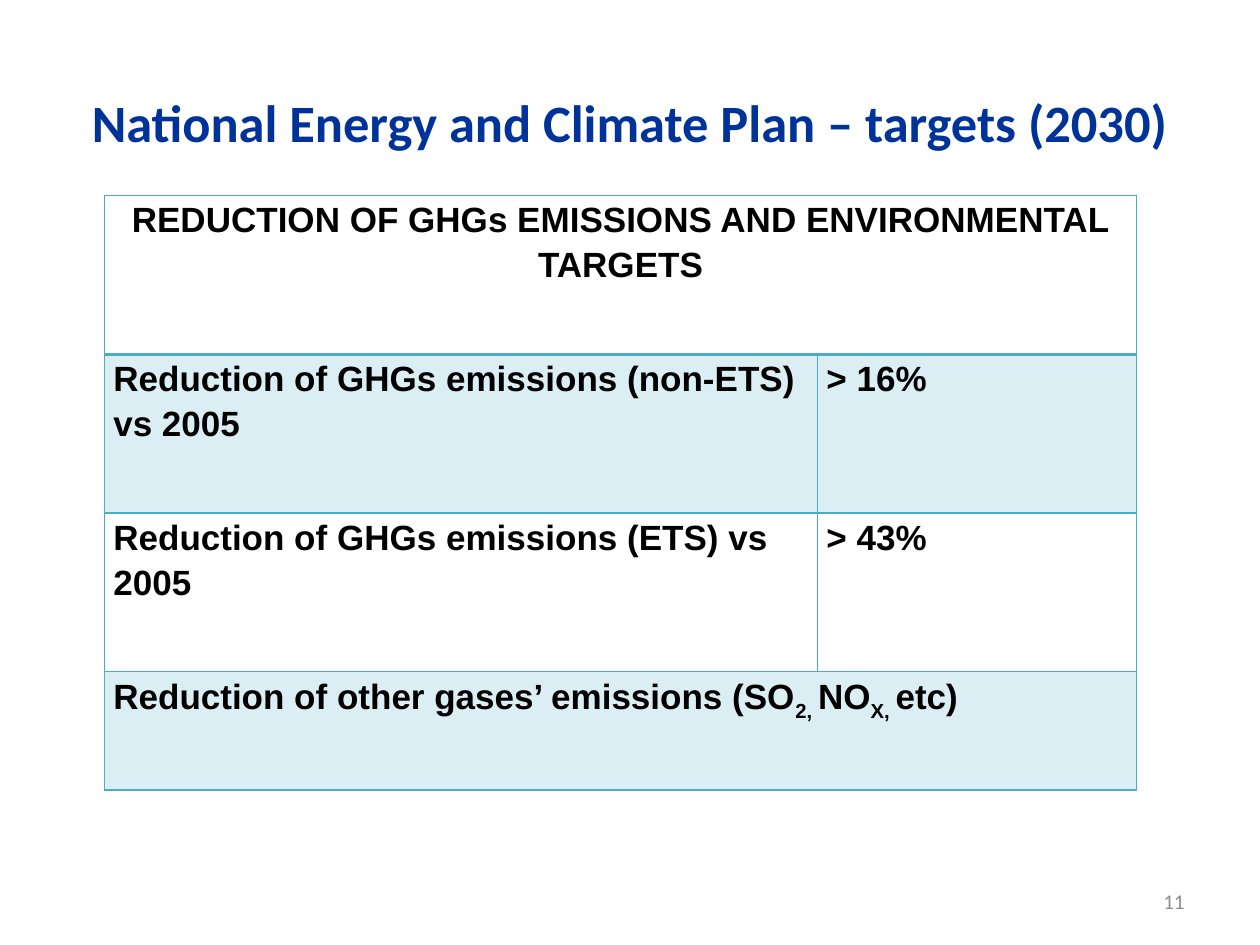
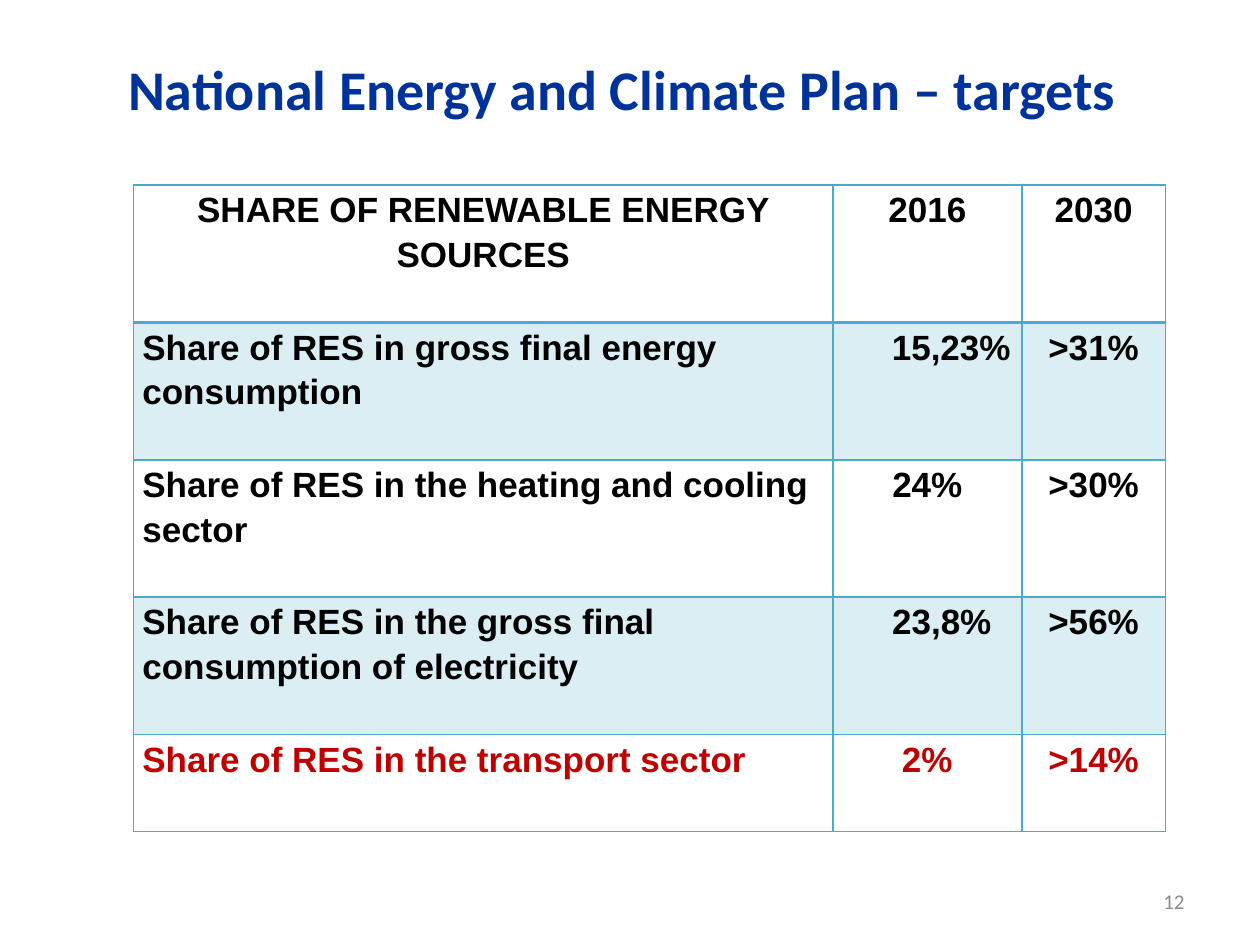
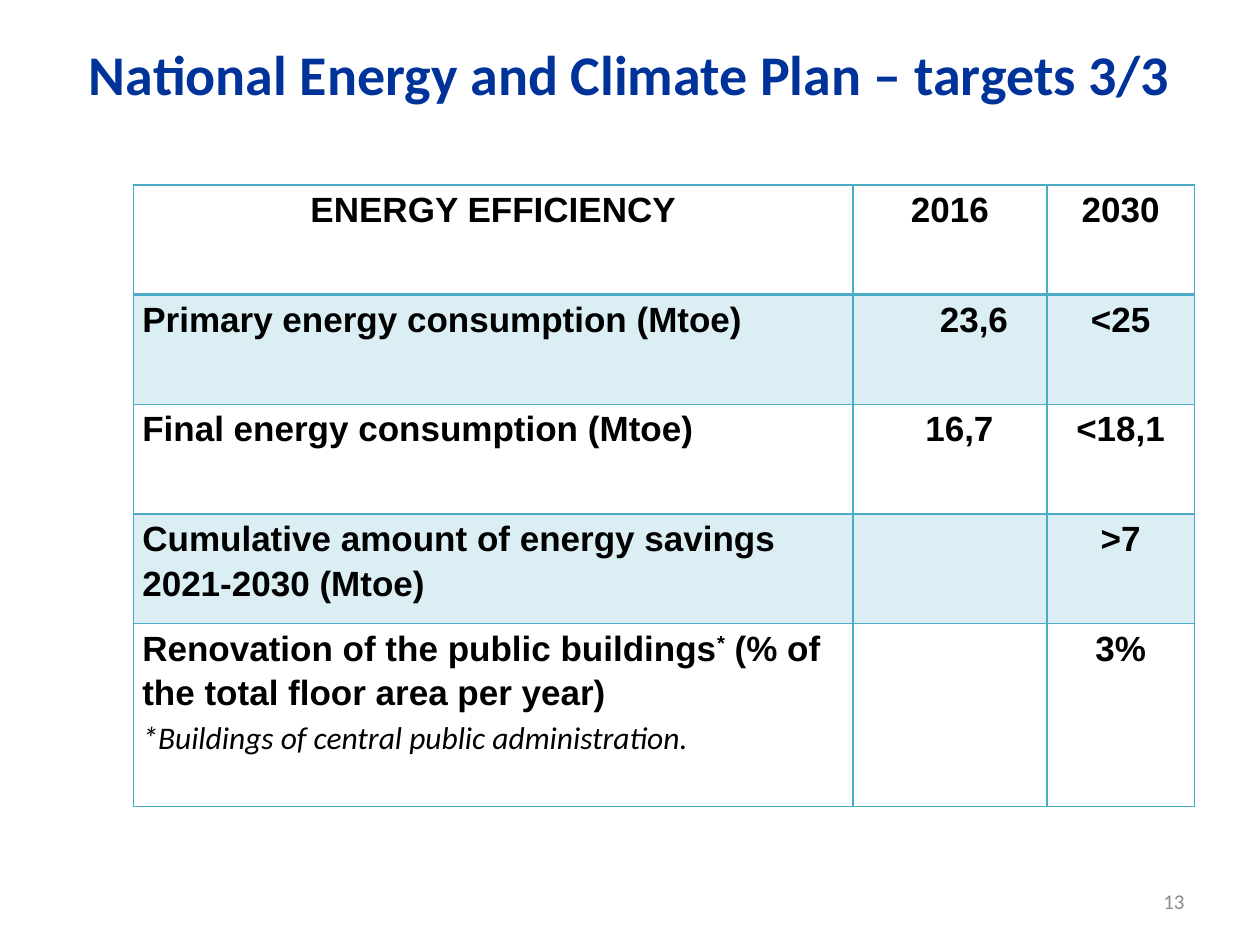
from dataclasses import dataclass

from lxml.etree import SubElement
from pptx import Presentation
from pptx.dml.color import RGBColor as RGB
from pptx.enum.text import MSO_ANCHOR as Anchor, PP_ALIGN as Align
from pptx.oxml.ns import qn
from pptx.util import Emu, Pt

PX = 9144  # EMU in one px, 100 px to the inch


def px(n):
    return Emu(n * PX)


@dataclass(frozen=True)
class Theme:
    navy: str = "003399"
    teal: str = "4BACC6"
    black: str = "000000"
    red: str = "C00000"
    grey: str = "8C8C8C"
    heading_font: str = "Calibri"
    table_font: str = "Arial"
    title_size: int = 32
    cell_size: int = 20
    note_size: int = 18
    number_size: int = 12
    tint: int = 20000  # alpha of the shaded rows
    rule: int = 1
    header_rule: int = 2


class Deck:
    def __init__(self, theme):
        self.theme = theme
        self.prs = Presentation()
        self.prs.slide_width, self.prs.slide_height = px(1000), px(750)
        self.s = None

    def add_slide(self, number):
        self.s = self.prs.slides.add_slide(self.prs.slide_layouts[6])
        t = self.theme
        self.text(str(number), (717, 695, 233, 40), Align.RIGHT,
                  dict(name=t.heading_font, size=t.number_size, color=t.grey))

    def run(self, p, text, fmt):
        r = p.add_run()
        r.text = text
        for key, value in fmt.items():
            if key == "color":
                r.font.color.rgb = RGB.from_string(value)
            elif key == "baseline":
                r._r.get_or_add_rPr().set(key, str(value * 1000))
            else:
                setattr(r.font, key, Pt(value) if key == "size" else value)

    def text(self, text, box, align, fmt, **margins):
        tf = self.s.shapes.add_textbox(*map(px, box)).text_frame
        tf.word_wrap = True
        tf.vertical_anchor = Anchor.MIDDLE
        for side, value in margins.items():
            setattr(tf, f"margin_{side}", px(value))
        p = tf.paragraphs[0]
        p.alignment = align
        self.run(p, text, fmt)

    def title(self, text, height=125, size=None, **margins):
        t = self.theme
        self.text(text, (50, 30, 900, height), Align.CENTER,
                  dict(name=t.heading_font, size=size or t.title_size,
                       color=t.navy, bold=True), **margins)

    def borders(self, cell, row):
        t = self.theme
        widths = dict(lnL=t.rule, lnR=t.rule,
                      lnT=t.header_rule if row == 1 else t.rule,
                      lnB=t.header_rule if row == 0 else t.rule)
        tcPr = cell._tc.get_or_add_tcPr()
        for tag, width in widths.items():
            ln = SubElement(tcPr, qn(f"a:{tag}"), w=str(Pt(width)))
            fill = SubElement(ln, qn("a:solidFill"))
            SubElement(fill, qn("a:srgbClr"), val=t.teal)

    def shade(self, cell, row):
        if row % 2 == 0:
            cell.fill.background()
            return
        cell.fill.solid()
        cell.fill.fore_color.rgb = RGB.from_string(self.theme.teal)
        color = cell._tc.tcPr.find(f"{qn('a:solidFill')}/{qn('a:srgbClr')}")
        SubElement(color, qn("a:alpha"), val=str(self.theme.tint))

    def fill_cell(self, cell, content, align, color, indent):
        """content: a string, or paragraphs that are lists of (text, format)."""
        t = self.theme
        margins = dict(left=7 + indent, top=0, right=7, bottom=0)
        for side, value in margins.items():
            setattr(cell, f"margin_{side}", px(value))
        base = dict(name=t.table_font, size=t.cell_size, color=color, bold=True)
        paragraphs = [[(content, {})]] if isinstance(content, str) else content
        tf = cell.text_frame
        for i, runs in enumerate(paragraphs):
            p = tf.add_paragraph() if i else tf.paragraphs[0]
            p.alignment, p.line_spacing = align, 1.15
            for text, fmt in runs:
                if text:
                    self.run(p, text, base | fmt)

    def table(self, left, top, widths, heights, rows, value_align=Align.CENTER,
              indents=None, red_row=None):
        """A row with a single entry spans the whole width."""
        t = self.theme
        table = self.s.shapes.add_table(
            len(rows), len(widths), px(left), px(top),
            px(sum(widths)), px(sum(heights))).table
        table.first_row = table.horz_banding = False
        for col, width in zip(table.columns, widths):
            col.width = px(width)
        for i, (row, height) in enumerate(zip(rows, heights)):
            table.rows[i].height = px(height)
            for j in range(len(widths)):
                self.borders(table.cell(i, j), i)
                self.shade(table.cell(i, j), i)
            if len(row) == 1:
                table.cell(i, 0).merge(table.cell(i, len(widths) - 1))
            for j, content in enumerate(row):
                align = (Align.CENTER if i == 0 else
                         value_align if j else Align.LEFT)
                self.fill_cell(table.cell(i, j), content, align,
                               t.red if i == red_row else t.black,
                               (indents or {}).get((i, j), 0))


def emissions(deck):
    deck.add_slide(11)
    deck.title("National Energy and Climate Plan – targets (2030)",
               size=30, top=13)
    low = dict(baseline=-25)
    other_gases = [[("Reduction of other gases’ emissions (SO", {}),
                    ("2, ", low), ("NO", {}), ("X, ", low), ("etc)", {})]]
    deck.table(83, 155, [566, 253], [126] * 3 + [94], [
        ["REDUCTION OF GHGs EMISSIONS AND ENVIRONMENTAL TARGETS"],
        ["Reduction of GHGs emissions (non-ETS) vs 2005", "> 16%"],
        ["Reduction of GHGs emissions (ETS) vs 2005", "> 43%"],
        [other_gases],
    ], value_align=Align.LEFT)


def renewables(deck):
    deck.add_slide(12)
    deck.title("National Energy and Climate Plan – targets",
               bottom=50, right=22)
    deck.table(106, 147, [555, 150, 114], [109] * 4 + [77], [
        ["SHARE OF RENEWABLE ENERGY SOURCES", "2016", "2030"],
        ["Share of RES in gross final energy consumption", "15,23%", ">31%"],
        ["Share of RES in the heating and cooling sector", "24%", ">30%"],
        ["Share of RES in the gross final consumption of electricity",
         "23,8%", ">56%"],
        ["Share of RES in the transport sector", "2%", ">14%"],
    ], indents={(1, 1): 38, (3, 1): 23}, red_row=4)


def efficiency(deck):
    t = deck.theme
    deck.add_slide(13)
    deck.title("National Energy and Climate Plan – targets 3/3",
               height=101, bottom=50)
    note = dict(name=t.heading_font, size=t.note_size, bold=False, italic=True)
    renovation = [
        [("Renovation of the public buildings", {}), ("*", dict(baseline=30)),
         (" (% of the total floor area per year)", {})],
        [("*Buildings of central public administration.", note)],
    ]
    deck.table(106, 147, [571, 154, 117], [87] * 4 + [145], [
        ["ENERGY EFFICIENCY", "2016", "2030"],
        ["Primary energy consumption (Mtoe)", "23,6", "<25"],
        ["Final energy consumption (Mtoe)", "16,7", "<18,1"],
        ["Cumulative amount of energy savings 2021-2030 (Mtoe)", "", ">7"],
        [renovation, "", "3%"],
    ], indents={(1, 1): 38, (2, 1): 15})


def main():
    deck = Deck(Theme())
    for build in (emissions, renewables, efficiency):
        build(deck)
    deck.prs.save("out.pptx")


if __name__ == "__main__":
    main()
